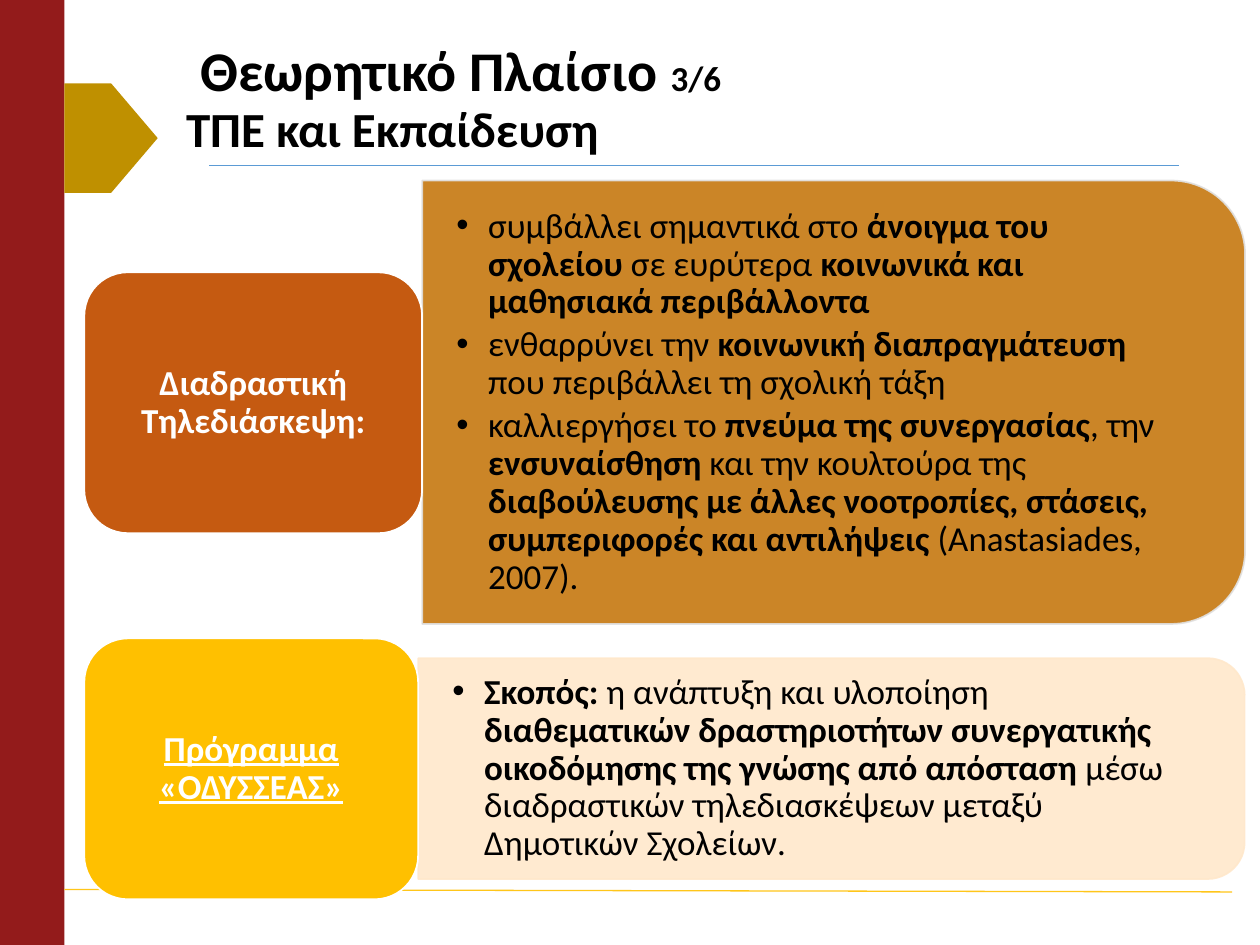
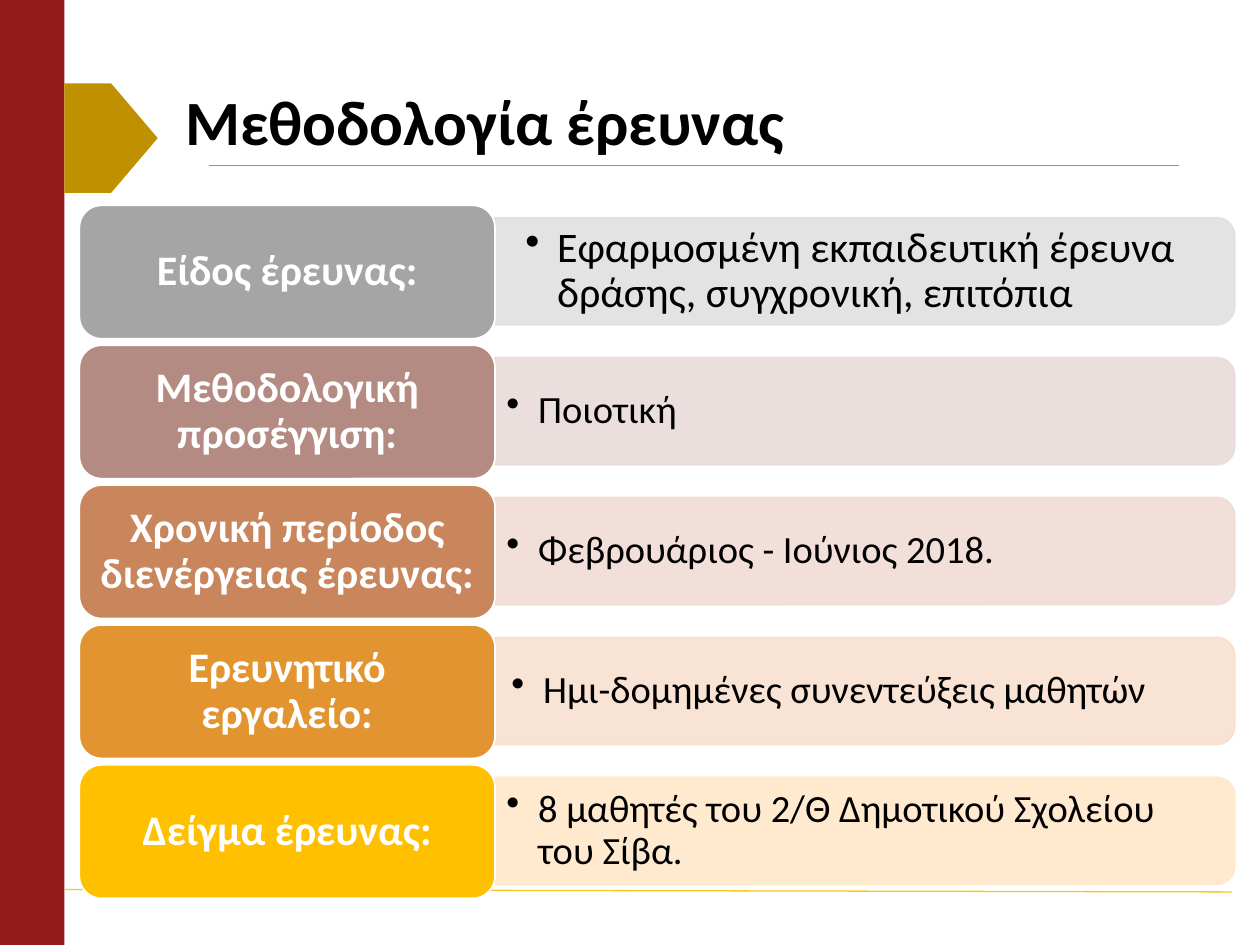
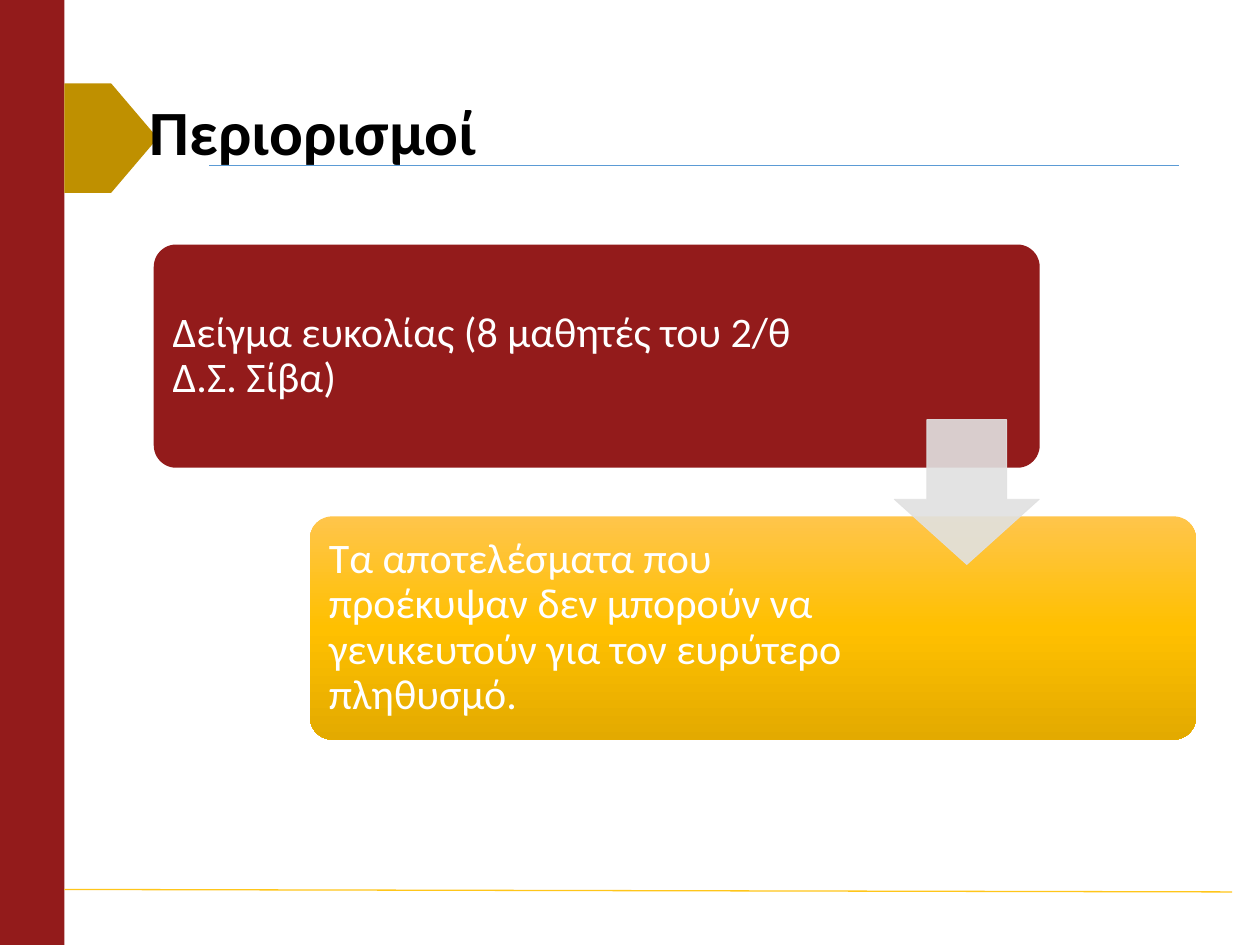
from dataclasses import dataclass

from lxml.etree import SubElement
from pptx import Presentation
from pptx.dml.color import RGBColor
from pptx.enum.shapes import MSO_CONNECTOR as Link, MSO_SHAPE as Kind
from pptx.enum.text import MSO_ANCHOR as Anchor, MSO_AUTO_SIZE as Fit, PP_ALIGN as Align
from pptx.oxml.ns import qn
from pptx.util import Cm, Pt


@dataclass(frozen=True)
class Theme:
    font: str = "Calibri"
    ink: str = "000000"
    white: str = "FFFFFF"
    red: str = "931B1B"
    blue: str = "5B9BD5"
    amber: str = "FFC61A"
    olive: str = "BF9000"
    rust: str = "C55A11"
    ochre: str = "C67810"
    gold: str = "FFC000"
    cream: str = "FFE8CB"
    grey: str = "E1E1E1"
    fade: tuple = ("FFC54B", "FFC000", "E3AA00")
    head: int = 36
    name: int = 32
    sub: int = 28
    big: int = 24
    mid: int = 22
    small: int = 20


T = Theme()
TWO, ONLY = 3, 5  # layouts: two lists, title only


def tint(color, hue):
    color.rgb = RGBColor.from_string(hue)


def clear(fill, share=90):
    """Set the opacity of a solid fill."""
    hue = fill._xPr.find(qn("a:solidFill"))[0]
    SubElement(hue, qn("a:alpha"), val=str(share * 1000))


class Deck:
    def __init__(self, theme):
        self.theme = theme
        self.prs = Presentation()
        self.prs.slide_width, self.prs.slide_height = Cm(25.4), Cm(19.05)

    def page(self, layout=ONLY):
        """Start a slide with the shared band, tab and rules."""
        t = self.theme
        self.slide = self.prs.slides.add_slide(self.prs.slide_layouts[layout])
        self.shapes = self.slide.shapes
        self.lists = [p for p in self.slide.placeholders if p != self.shapes.title]
        self.shape(Kind.RECTANGLE, (0, 0, 1.3, 19.05), t.red)
        self.rule((4.22, 3.33), (23.77, 3.33), t.blue)
        self.rule((1.3, 17.93), (24.84, 17.98), t.amber)
        self.shape(Kind.PENTAGON, (1.3, 1.68, 1.88, 2.21), t.olive)

    def place(self, item, box):
        item.left, item.top, item.width, item.height = map(Cm, box)
        self.shapes._spTree.append(item._element)  # bring to front

    def shape(self, kind, box, hue=None, edge=None, wide=1):
        item = self.shapes.add_shape(kind, *map(Cm, box))
        item.shadow.inherit = False
        if hue:
            item.fill.solid()
            tint(item.fill.fore_color, hue)
        if edge:
            tint(item.line.color, edge)
            item.line.width = Pt(wide)
        else:
            item.line.fill.background()
        return item

    def rule(self, start, end, hue):
        line = self.shapes.add_connector(Link.STRAIGHT, *map(Cm, start + end))
        tint(line.line.color, hue)
        line.line.width = Pt(0.75)
        SubElement(line._element.spPr, qn("a:effectLst"))

    def frame(self, item, left=0.25, top=0.13, right=None, anchor=Anchor.MIDDLE):
        """Set up a text frame; the right inset follows the left one."""
        text = item.text_frame
        text.word_wrap, text.auto_size = True, Fit.NONE
        text.vertical_anchor = anchor
        text.margin_left = Cm(left)
        text.margin_right = Cm(left if right is None else right)
        text.margin_top = text.margin_bottom = Cm(top)
        return text

    def style(self, para, size, hue, align=Align.LEFT, bold=None):
        font = para.font
        font.name, font.size, font.bold = self.theme.font, Pt(size), bold
        tint(font.color, hue)
        para.alignment, para.line_spacing = align, 0.9
        para.space_before = Pt(0)

    def title(self, box, *lines, left=0.25, top=0.13, anchor=Anchor.MIDDLE):
        """Each line is a list of (text, size) parts."""
        item = self.shapes.title
        self.place(item, box)
        para = self.frame(item, left, top, anchor=anchor).paragraphs[0]
        base = lines[0][0][1]
        self.style(para, base, self.theme.ink, bold=True)
        for n, line in enumerate(lines):
            if n:
                para.add_line_break()
            for words, size in line:
                run = para.add_run()
                run.text = words
                if size != base:
                    run.font.size = Pt(size)

    def label(self, box, words, hue, size, under=None):
        item = self.shape(Kind.ROUNDED_RECTANGLE, box, hue, self.theme.white)
        para = self.frame(item, 0.28, 0.1).paragraphs[0]
        para.text = words
        self.style(para, size, self.theme.white, Align.CENTER, True)
        para.font.underline = under

    def panel(self, box, items, hue, size, left, top, edge=None):
        """Panel with its right corners rounded, and a list on it."""
        x, y, w, h = box
        turned = (x + (w - h) / 2, y + (h - w) / 2, h, w)
        item = self.shape(Kind.ROUND_2_SAME_RECTANGLE, turned, hue, edge or hue)
        item.rotation = 90
        clear(item.fill)
        clear(item.line.fill)
        self.bullets((x, y, w - 0.05 * h, h), items, size, left, top)

    def bullets(self, box, items, size, left, top):
        """List in a free placeholder or a text box; *stars* mark bold."""
        item = self.lists.pop(0) if self.lists else self.shapes.add_textbox(0, 0, 0, 0)
        self.place(item, box)
        text = self.frame(item, left, top)
        for n, words in enumerate(items):
            para = text.add_paragraph() if n else text.paragraphs[0]
            self.style(para, size, self.theme.ink)
            para.space_after = Pt(0.15 * size)
            props = para._p.get_or_add_pPr()
            props.set("marL", str(Cm(0.64)))
            props.set("indent", str(-Cm(0.64)))
            mark = SubElement(props, qn("a:buChar"), char="•")
            props.find(qn("a:defRPr")).addprevious(mark)
            for k, part in enumerate(words.split("*")):
                if part:
                    run = para.add_run()
                    run.text = part
                    if k % 2:
                        run.font.bold = True

    def step(self, box, words, right, hue=None):
        """Box with text at its left; a gradient when no hue is given."""
        item = self.shape(Kind.ROUNDED_RECTANGLE, box, hue)
        item.adjustments[0] = 0.1
        if not hue:
            self.blend(item.fill)
        para = self.frame(item, 0.25, 0.25, right).paragraphs[0]
        para.text = words
        self.style(para, self.theme.big, self.theme.white)

    def blend(self, fill):
        fill.gradient()
        fill.gradient_angle = 270
        stops = fill._xPr.find(qn("a:gradFill")).find(qn("a:gsLst"))
        for old in list(stops):
            stops.remove(old)
        for n, hue in enumerate(self.theme.fade):
            stop = SubElement(stops, qn("a:gs"), pos=str(n * 50000))
            SubElement(stop, qn("a:srgbClr"), val=hue)

    def arrow(self, box):
        hue = self.theme.grey
        item = self.shape(Kind.DOWN_ARROW, box, hue, hue, 0.5)
        item.adjustments[0], item.adjustments[1] = 0.55, 0.45
        clear(item.fill)
        clear(item.line.fill)


def theory(deck):
    deck.page(TWO)
    deck.title((3.5, 0.91, 20, 2.13),
               [(" ", T.head), ("Θεωρητικό Πλαίσιο ", T.name), ("3/6", T.small)],
               [("ΤΠΕ και Εκπαίδευση", T.sub)])
    deck.panel((8.51, 3.64, 16.59, 8.94), [
        "συμβάλλει σημαντικά στο *άνοιγμα του σχολείου* σε ευρύτερα "
        "*κοινωνικά και μαθησιακά περιβάλλοντα*",
        "ενθαρρύνει την *κοινωνική διαπραγμάτευση *που περιβάλλει τη σχολική τάξη",
        "καλλιεργήσει το *πνεύμα της συνεργασίας*, την *ενσυναίσθηση* και την "
        "κουλτούρα της *διαβούλευσης με άλλες νοοτροπίες, στάσεις, "
        "συμπεριφορές και αντιλήψεις* (Anastasiades, 2007).",
    ], T.ochre, T.small, 0.69, 0.35, T.grey)
    deck.label((1.7, 5.49, 6.81, 5.26), "Διαδραστική Τηλεδιάσκεψη:", T.rust, T.small)
    deck.panel((8.43, 13.27, 16.66, 4.45), [
        "*Σκοπός: *η ανάπτυξη και υλοποίηση *διαθεματικών δραστηριοτήτων "
        "συνεργατικής οικοδόμησης της γνώσης από απόσταση *μέσω διαδραστικών "
        "τηλεδιασκέψεων μεταξύ Δημοτικών Σχολείων.",
    ], T.cream, T.small, 0.69, 0.35)
    deck.label((1.7, 12.87, 6.73, 5.26), "Πρόγραμμα «ΟΔΥΣΣΕΑΣ»", T.gold, T.small, True)


def method(deck):
    deck.page()
    deck.title((2.9, 1.73, 21.59, 1.6), [("Μεθοδολογία έρευνας", T.head)], left=0.83)
    # label, its colour, text, panel colour, text size, left inset
    rows = [
        ("Είδος έρευνας:", "A5A5A5",
         "Εφαρμοσμένη εκπαιδευτική έρευνα δράσης, συγχρονική, επιτόπια",
         T.grey, T.big, 0.61),
        ("Μεθοδολογική προσέγγιση:", "B48B83", "Ποιοτική", "E9DCDA", T.mid, 0.23),
        ("Χρονική περίοδος διενέργειας έρευνας:", "C9855C",
         "Φεβρουάριος - Ιούνιος 2018.", "F1DCD5", T.mid, 0.23),
        ("Ερευνητικό εργαλείο:", "E19430",
         "Ημι-δομημένες συνεντεύξεις μαθητών", "F8E0D0", T.mid, 0.33),
        ("Δείγμα έρευνας:", T.gold,
         "8 μαθητές του 2/Θ Δημοτικού Σχολείου του Σίβα.", T.cream, T.mid, 0.23),
    ]
    for n, (name, hue, words, pale, size, left) in enumerate(rows):
        top = 4.14 + n * 2.82
        deck.panel((9.98, top + 0.25, 14.91, 2.16), [words], pale, size, left, left / 2)
        deck.label((1.6, top, 8.38, 2.69), name, hue, T.big)


def limits(deck):
    deck.page()
    deck.title((2.49, 0.91, 21.59, 2.5), [("Περιορισμοί", T.head)],
               left=0.53, top=0, anchor=Anchor.BOTTOM)
    deck.step((3.1, 4.93, 17.86, 4.5),
              "Δείγμα ευκολίας (8 μαθητές του 2/θ Δ.Σ. Σίβα)", 4.65, T.red)
    deck.step((6.25, 10.41, 17.86, 4.5),
              "Τα αποτελέσματα που προέκυψαν δεν μπορούν να γενικευτούν "
              "για τον ευρύτερο πληθυσμό.", 6.35)
    deck.arrow((18.03, 8.46, 2.92, 2.92))


def main():
    deck = Deck(T)
    for build in (theory, method, limits):
        build(deck)
    deck.prs.save("out.pptx")


if __name__ == "__main__":
    main()
